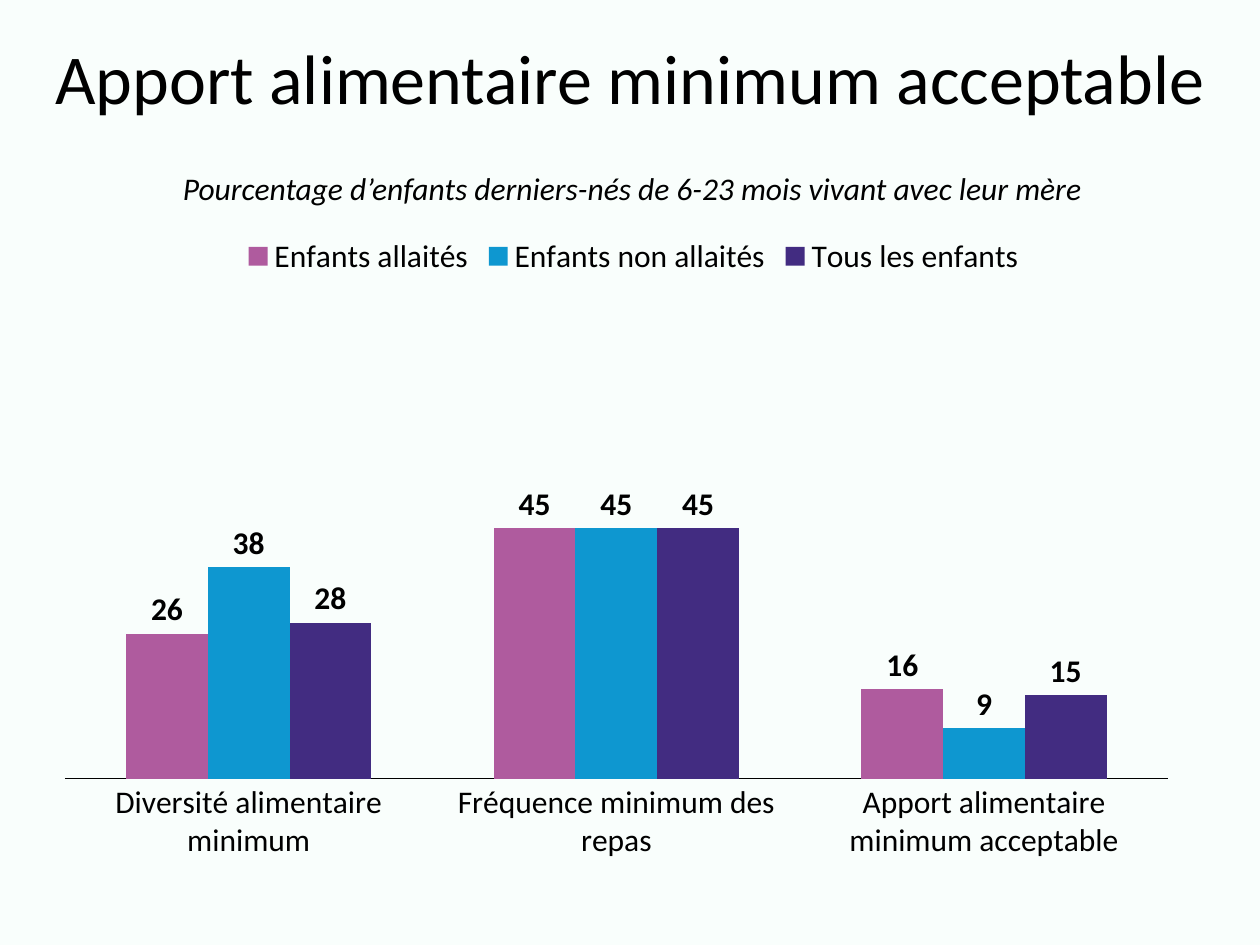
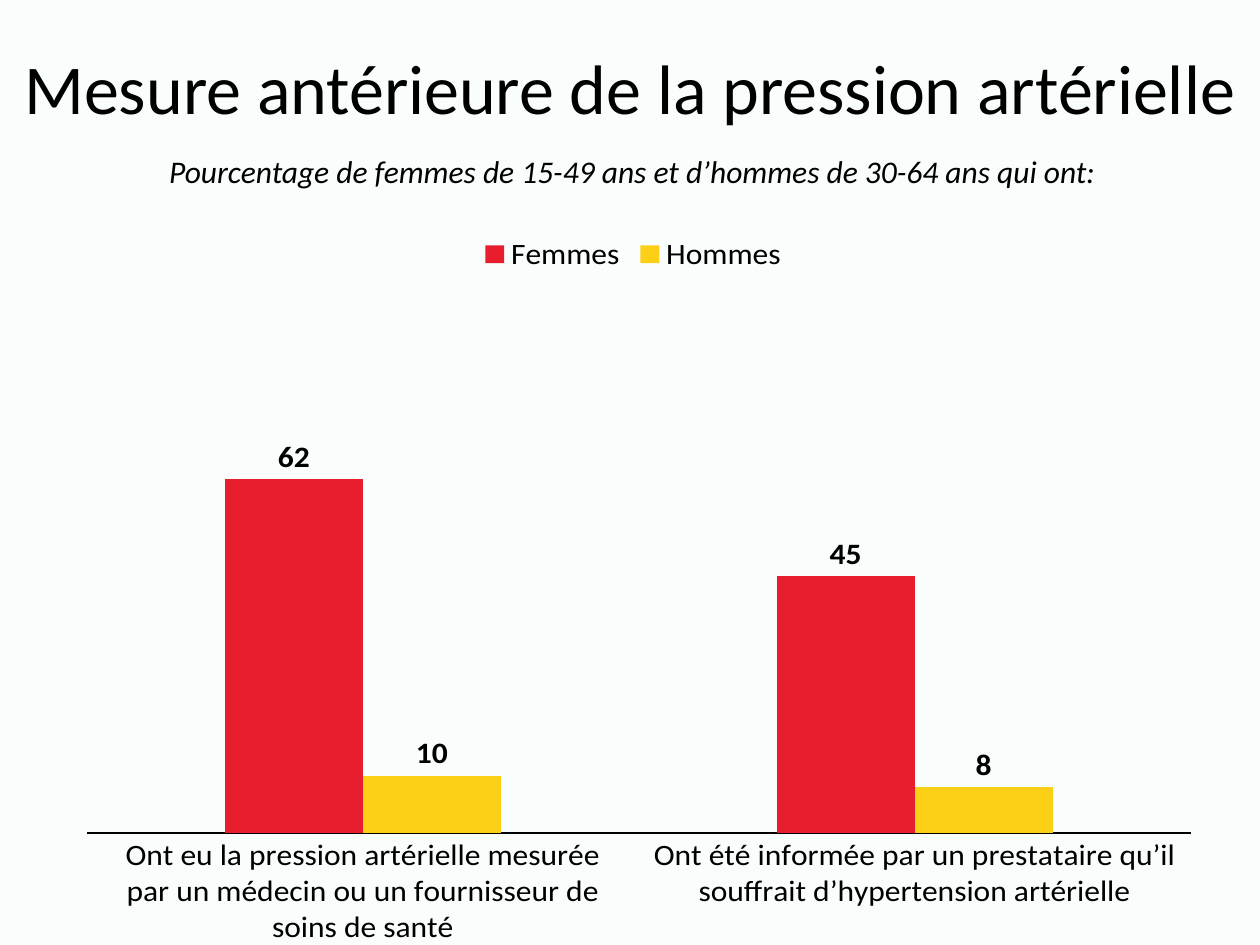
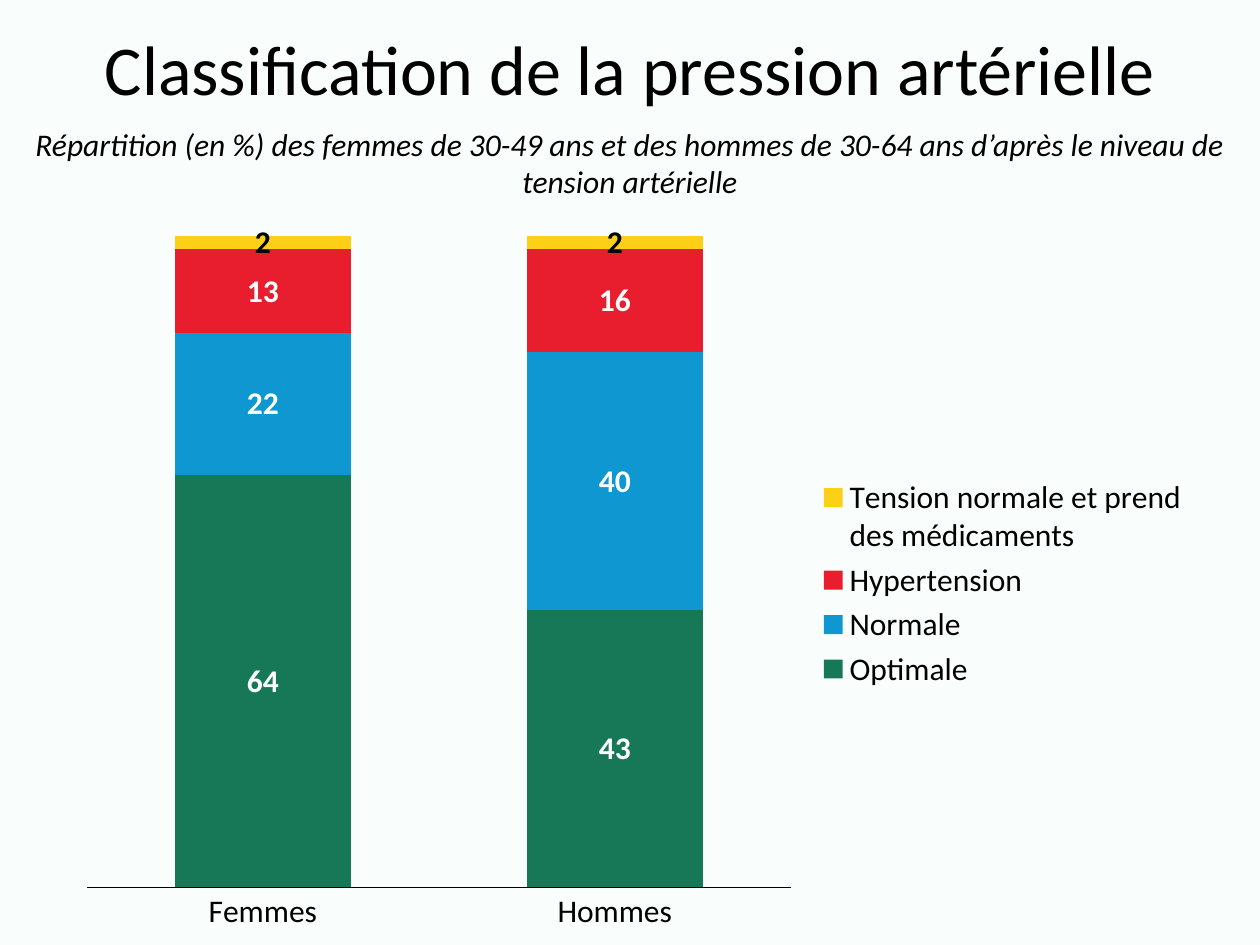
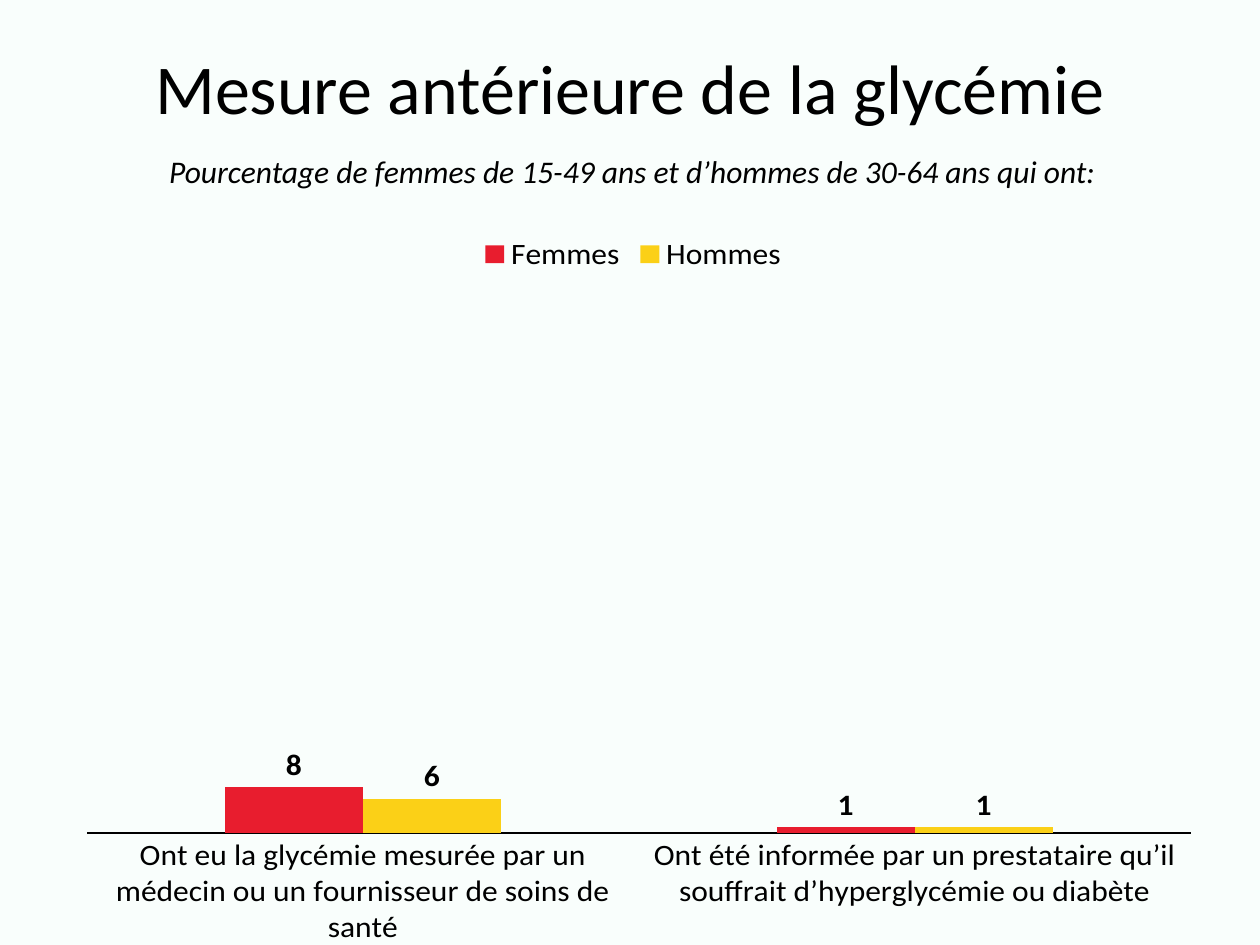
from lxml.etree import SubElement
from pptx import Presentation
from pptx.chart.data import CategoryChartData as Data
from pptx.dml.color import RGBColor
from pptx.enum.chart import XL_CHART_TYPE as Kind
from pptx.enum.chart import XL_LABEL_POSITION as Pos
from pptx.enum.chart import XL_LEGEND_POSITION as Side
from pptx.enum.chart import XL_TICK_MARK as Tick
from pptx.enum.text import MSO_ANCHOR as Anchor
from pptx.enum.text import MSO_AUTO_SIZE as Fit
from pptx.enum.text import PP_ALIGN as Align
from pptx.oxml.ns import qn
from pptx.util import Inches, Pt

# Shared look
FONT = "Calibri"
BACK, BLACK, WHITE = "F9FEFC", "000000", "FFFFFF"
PINK, BLUE, VIOLET = "AF5B9E", "0E97D0", "422C81"
RED, YELLOW, GREEN = "E81D2E", "FBD017", "177858"
CHART_BOX = (0.51, 1.76, 9.03, 5.74)
WIDE = (0.02, 0.06, 0.97, 0.84)
ADULTS = "Pourcentage de femmes de 15-49 ans et d’hommes de 30-64 ans qui ont:"


def color(code):
    return RGBColor.from_string(code)


def style(font, size=18, code=BLACK, **marks):
    font.color.rgb = color(code)
    for key, value in dict(name=FONT, size=Pt(size), **marks).items():
        setattr(font, key, value)


def add_text(slide, box, text, size, **marks):
    """Centred paragraph in a box; returns its frame."""
    frame = slide.shapes.add_textbox(*map(Inches, box)).text_frame
    frame.word_wrap = True
    para = frame.paragraphs[0]
    para.alignment = Align.CENTER
    run = para.add_run()
    run.text = text
    style(run.font, size, **marks)
    return frame


def add_title(slide, box, text):
    frame = add_text(slide, box, text, 40)
    frame.vertical_anchor = Anchor.MIDDLE
    frame.paragraphs[0].line_spacing = 0.9


def add_note(slide, box, text):
    frame = add_text(slide, box, text, 18, italic=True)
    frame.auto_size = Fit.SHAPE_TO_FIT_TEXT


def set_plot(chart, area):
    """Fix the inner plot area, in fractions of the chart."""
    plot = chart.element.find(".//" + qn("c:plotArea"))
    for old in plot.findall(qn("c:layout")):
        plot.remove(old)
    layout = SubElement(plot, qn("c:layout"))
    plot.insert(0, layout)
    manual = SubElement(layout, qn("c:manualLayout"))
    rules = dict(layoutTarget="inner", xMode="edge", yMode="edge")
    rules.update(zip("xywh", area))
    for key, value in rules.items():
        SubElement(manual, qn("c:" + key)).set("val", str(value))


def add_bars(slide, box, cats, rows, gap, area=None, stacked=False):
    """Column chart; rows hold name, values, fill and label colour."""
    data = Data()
    data.categories = cats
    for name, values, *_ in rows:
        data.add_series(name, values)
    kind = Kind.COLUMN_STACKED_100 if stacked else Kind.COLUMN_CLUSTERED
    chart = slide.shapes.add_chart(kind, *map(Inches, box), data).chart
    style(chart.font, 10)
    chart.has_title = False

    # Legend
    chart.has_legend = True
    chart.legend.position = Side.RIGHT if stacked else Side.TOP
    chart.legend.include_in_layout = False
    style(chart.legend.font)

    # Axes
    axis = chart.category_axis
    axis.major_tick_mark = axis.minor_tick_mark = Tick.NONE
    style(axis.tick_labels.font)
    axis.format.line.color.rgb = color(BLACK)
    axis.format.line.width = Pt(0.75)
    scale = chart.value_axis
    scale.has_major_gridlines = scale.visible = False
    if not stacked:
        scale.minimum_scale, scale.maximum_scale = 0, 100

    # Columns and their labels
    plot = chart.plots[0]
    plot.vary_by_categories = False
    plot.gap_width = gap
    plot.overlap = 100 if stacked else 0
    for series, (_, _, fill, ink) in zip(plot.series, rows):
        series.format.fill.solid()
        series.format.fill.fore_color.rgb = color(fill)
        labels = series.data_labels
        labels.show_value = True
        labels.position = Pos.CENTER if stacked else Pos.OUTSIDE_END
        style(labels.font, code=ink, bold=True)
    if area:
        set_plot(chart, area)


def add_page(deck, title, head, note, sub, **bars):
    """Slide with a title, a chart and an italic subtitle."""
    slide = deck.slides.add_slide(deck.slide_layouts[6])
    fill = slide.background.fill
    fill.solid()
    fill.fore_color.rgb = color(BACK)
    add_title(slide, head, title)
    add_bars(slide, CHART_BOX, **bars)
    add_note(slide, sub, note)


def add_sexes(deck, title, cats, women, men):
    """Women and men side by side."""
    add_page(deck, title, (0, 0, 10, 1.45), ADULTS, (0.02, 1.16, 10, 0.4),
             cats=cats, gap=200, area=WIDE,
             rows=[("Femmes", women, RED, BLACK),
                   ("Hommes", men, YELLOW, BLACK)])


def main():
    deck = Presentation()
    deck.slide_width, deck.slide_height = Inches(10), Inches(7.5)

    # Children's diet
    add_page(
        deck, "Apport alimentaire minimum acceptable", (0, 0.15, 10, 1),
        "Pourcentage d’enfants derniers-nés de 6-23 mois vivant avec leur mère",
        (0.02, 1.29, 10, 0.4),
        cats=["Diversité alimentaire minimum", "Fréquence minimum des repas",
              "Apport alimentaire minimum acceptable"],
        gap=150, area=(0, 0, 0.97, 0.77),
        rows=[("Enfants allaités", (26, 45, 16), PINK, BLACK),
              ("Enfants non allaités", (38, 45, 9), BLUE, BLACK),
              ("Tous les enfants", (28, 45, 15), VIOLET, BLACK)])

    # Blood pressure
    add_sexes(
        deck, "Mesure antérieure de la pression artérielle",
        ["Ont eu la pression artérielle mesurée par un médecin "
         "ou un fournisseur de soins de santé",
         "Ont été informée par un prestataire qu’il souffrait "
         "d’hypertension artérielle"],
        (62, 45), (10, 8))
    add_page(
        deck, "Classification de la pression artérielle", (0, 0, 10, 1.16),
        "Répartition (en %) des femmes de 30-49 ans et des hommes de "
        "30-64 ans d’après le niveau de tension artérielle",
        (0, 0.94, 10, 0.71),
        cats=["Femmes", "Hommes"], gap=100, stacked=True,
        rows=[("Optimale", (64, 43), GREEN, WHITE),
              ("Normale", (22, 40), BLUE, WHITE),
              ("Hypertension", (13, 16), RED, WHITE),
              ("Tension normale et prend des médicaments", (2, 2),
               YELLOW, BLACK)])

    # Blood sugar
    add_sexes(
        deck, "Mesure antérieure de la glycémie",
        ["Ont eu la glycémie mesurée par un médecin "
         "ou un fournisseur de soins de santé",
         "Ont été informée par un prestataire qu’il souffrait "
         "d’hyperglycémie ou diabète"],
        (8, 1), (6, 1))

    deck.save("out.pptx")


if __name__ == "__main__":
    main()
